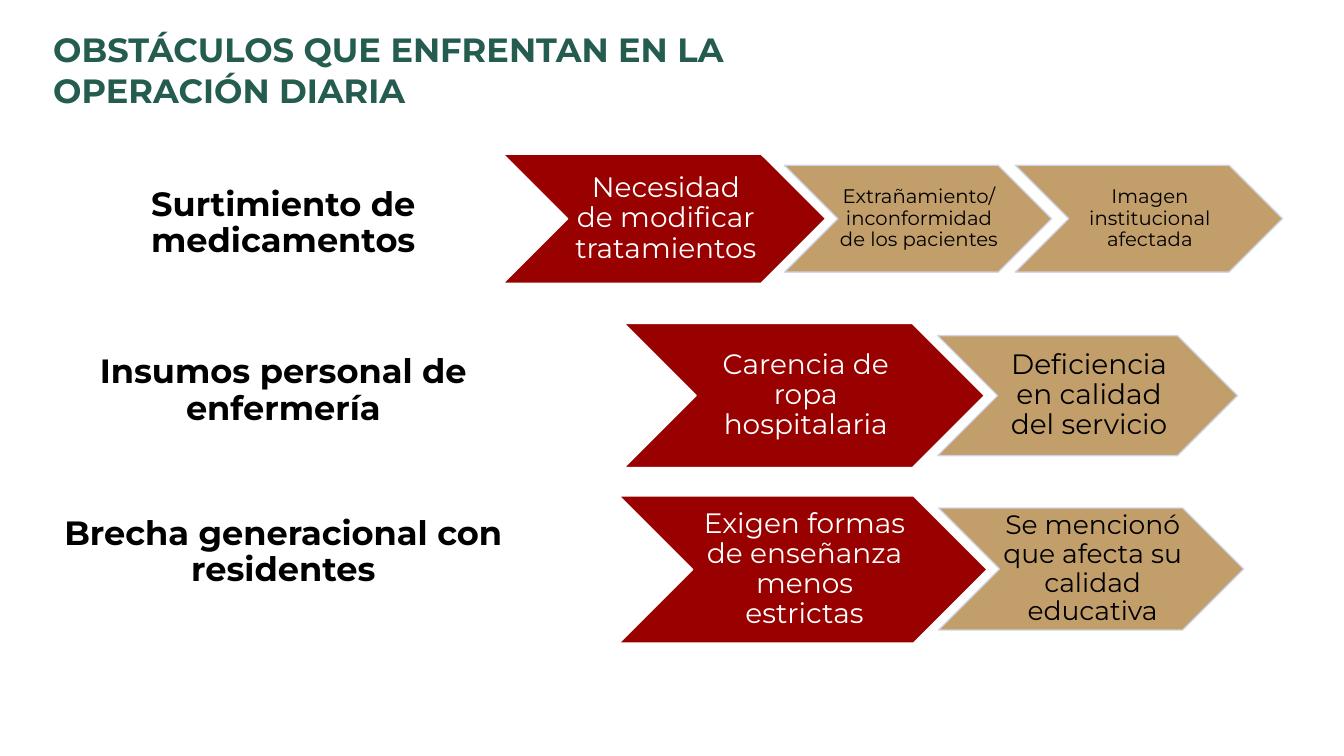
import pptx
import pptx.util
import pptx.dml.color
import pptx.enum.shapes
import pptx.enum.text
import pptx.oxml
import pptx.oxml.ns
from pptx.util import Inches

FONT = "Montserrat"
GREEN, RED, GOLD = "245C4F", "990000", "BC945A"
PALE_BLUE, WHITE, BLACK = "CFD5EA", "FFFFFF", "000000"
CENTER = pptx.enum.text.PP_ALIGN.CENTER
CHEVRON_RATIO = 2.5

# Label, label top, then chevrons as (left, top, height, size, text); the first is the cause.
OBSTACLES = [
    ("Surtimiento de medicamentos", 1.81, 0.73, [
        (4.99, 1.53, 1.28, 20, "Necesidad de modificar tratamientos"),
        (7.78, 1.64, 1.06, 14, "Extrañamiento/ inconformidad de los pacientes"),
        (10.07, 1.64, 1.06, 14, "Imagen institucional afectada"),
    ]),
    ("Insumos personal de enfermería", 3.47, 0.9, [
        (6.19, 3.21, 1.43, 20, "Carencia de ropa hospitalaria"),
        (9.3, 3.33, 1.19, 20, "Deficiencia en calidad del servicio"),
    ]),
    ("Brecha generacional con residentes", 5.07, 1.19, [
        (6.14, 4.92, 1.46, 20, "Exigen formas de enseñanza menos estrictas"),
        (9.31, 5.04, 1.21, 19, "Se mencionó que afecta su calidad educativa"),
    ]),
]


def rgb(color):
    return pptx.dml.color.RGBColor.from_string(color)


def set_attributes(target, values):
    for name, value in values.items():
        setattr(target, name, value)


def write_text(shape, text, size, color, frame_format, para_format, bold=False):
    frame = shape.text_frame
    set_attributes(frame, {"word_wrap": True, **frame_format})
    para = frame.paragraphs[0]
    set_attributes(para, para_format)
    span = para.add_run()
    span.text = text
    set_attributes(span.font, {"name": FONT, "size": pptx.util.Pt(size), "bold": bold})
    span.font.color.rgb = rgb(color)


def add_heading(page, left, top, width, height, text, color, para_format):
    box = page.shapes.add_textbox(Inches(left), Inches(top), Inches(width), Inches(height))
    write_text(box, text, 24, color, {}, para_format, bold=True)


def set_opacity(shape, percent):
    """Apply the opacity to both fill and outline."""
    for color in shape.element.spPr.iter(pptx.oxml.ns.qn("a:srgbClr")):
        alpha = color.makeelement(pptx.oxml.ns.qn("a:alpha"), {"val": str(percent * 1000)})
        color.append(alpha)


def add_chevron(page, left, top, height, size, text, is_cause):
    chevron = page.shapes.add_shape(
        pptx.enum.shapes.MSO_SHAPE.CHEVRON,
        Inches(left), Inches(top), Inches(height * CHEVRON_RATIO), Inches(height))
    chevron.shadow.inherit = False
    chevron.fill.solid()
    chevron.fill.fore_color.rgb = rgb(RED if is_cause else GOLD)
    chevron.line.color.rgb = rgb(WHITE if is_cause else PALE_BLUE)
    chevron.line.width = pptx.util.Pt(1)
    if not is_cause:
        set_opacity(chevron, 90)
    frame_format = {
        "vertical_anchor": pptx.enum.text.MSO_ANCHOR.MIDDLE,
        "margin_left": Inches(0.02 if size < 19 else 0.03),
        "margin_right": 0,
        "margin_top": Inches(0.01),
        "margin_bottom": Inches(0.01),
    }
    write_text(chevron, text, size, WHITE if is_cause else BLACK, frame_format,
               {"alignment": CENTER, "line_spacing": 0.9})


def main():
    deck = pptx.Presentation()
    set_attributes(deck, {"slide_width": Inches(13.33), "slide_height": Inches(7.5)})
    page = deck.slides.add_slide(deck.slide_layouts[6])
    add_heading(page, 0.43, 0.24, 8.63, 0.91,
                "OBSTÁCULOS QUE ENFRENTAN EN LA OPERACIÓN DIARIA", GREEN, {})
    for label, top, height, chevrons in OBSTACLES:
        add_heading(page, 0.43, top, 4.76, height, label, BLACK,
                    {"alignment": CENTER, "line_spacing": 0.9})
        for index, chevron in enumerate(chevrons):
            add_chevron(page, *chevron, is_cause=index == 0)
    deck.save("out.pptx")


if __name__ == "__main__":
    main()
